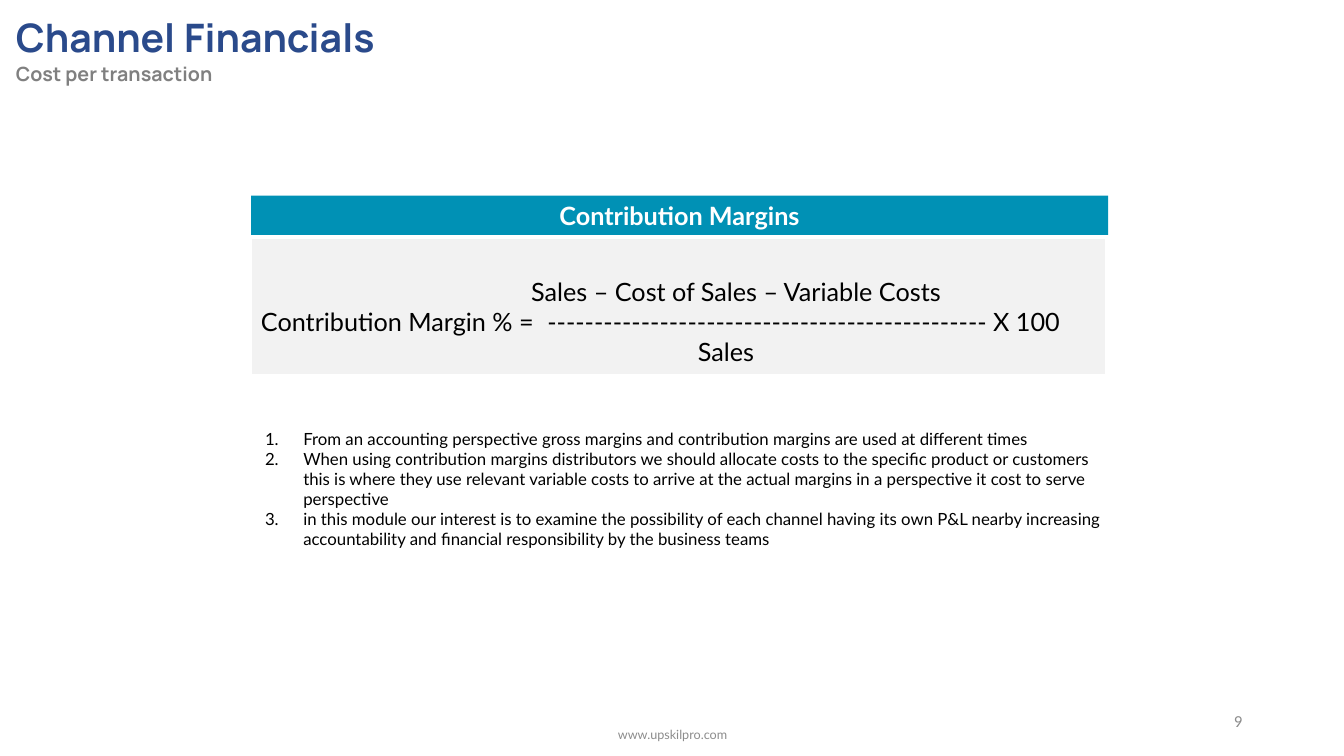
import pptx
import pptx.util
from pptx.dml.color import RGBColor
from pptx.enum.shapes import MSO_SHAPE
from pptx.enum.text import MSO_ANCHOR, PP_ALIGN
from pptx.util import Inches
from lxml import etree

NAVY = RGBColor(0x2A, 0x4A, 0x8B)
GREY = RGBColor(0x80, 0x80, 0x80)
FOOTER_GREY = RGBColor(0x8C, 0x8C, 0x8C)
TEAL = RGBColor(0x00, 0x91, 0xB5)
PALE = RGBColor(0xF2, 0xF2, 0xF2)
WHITE = RGBColor(0xFF, 0xFF, 0xFF)
BLACK = RGBColor(0x00, 0x00, 0x00)

NOTES = [
    "From an accounting perspective gross margins and contribution margins are used at different times",
    "When using contribution margins distributors we should allocate costs to the specific product or "
    "customers this is where they use relevant variable costs to arrive at the actual margins in a "
    "perspective it cost to serve perspective",
    "in this module our interest is to examine the possibility of each channel having its own P&L nearby "
    "increasing accountability and financial responsibility by the business teams",
]


def style(font, name, size, color, bold=False):
    font.name = name
    font.size = pptx.util.Pt(size)
    font.color.rgb = color
    font.bold = bold


def add_text(slide, place, lines, name, size, color, align=PP_ALIGN.LEFT, anchor=MSO_ANCHOR.TOP):
    """Add a wrapping text box with one paragraph per line."""
    box = slide.shapes.add_textbox(*map(Inches, place))
    frame = box.text_frame
    frame.word_wrap = True
    frame.vertical_anchor = anchor
    frame.text = "\n".join(lines)
    for para in frame.paragraphs:
        para.alignment = align
        for span in para.runs:
            style(span.font, name, size, color)
    return box


def add_panel(slide, place, fill, lines, color, bold=False):
    """Add a filled rectangle with centred 18 pt lines."""
    panel = slide.shapes.add_shape(MSO_SHAPE.RECTANGLE, *map(Inches, place))
    panel.shadow.inherit = False
    panel.fill.solid()
    panel.fill.fore_color.rgb = fill
    panel.line.fill.background()
    frame = panel.text_frame
    frame.word_wrap = True
    frame.vertical_anchor = MSO_ANCHOR.MIDDLE
    frame.text = "\n".join(lines)
    for para in frame.paragraphs:
        para.alignment = PP_ALIGN.CENTER
        for span in para.runs:
            style(span.font, "Lato", 18, color, bold)
    return panel


def add_child(parent, tag, **attributes):
    child = etree.SubElement(parent, pptx.oxml.ns.qn(tag))
    for key, value in attributes.items():
        child.set(key, str(value))
    return child


def indent(para, left, first=0):
    properties = para._p.get_or_add_pPr()
    properties.set("marL", str(Inches(left)))
    properties.set("indent", str(Inches(first)))
    return properties


def add_heading(slide):
    box = add_text(slide, (0.06, 0.03, 8.61, 0.88), ["", "Cost per transaction"],
                   "Manrope", 14, GREY)
    title, subtitle = box.text_frame.paragraphs
    for text, size in (("Channel", 28), (" ", 32), ("Financials", 28)):
        span = title.add_run()
        span.text = text
        style(span.font, "Manrope", size, NAVY, bold=True)
    subtitle.runs[0].font.bold = True


def add_formula(slide):
    """Add the margin fraction, with numerator and denominator centred on its rule."""
    lines = ["Sales – Cost of Sales – Variable Costs",
             "Contribution Margin % =\t" + "-" * 47 + " X 100",
             "Sales"]
    panel = add_panel(slide, (2.49, 2.36, 8.48, 1.36), PALE, lines, BLACK)
    panel.line.color.rgb = WHITE
    panel.line.width = pptx.util.Pt(1)
    panel.text_frame.margin_top = Inches(0.35)
    numerator, rule, denominator = panel.text_frame.paragraphs
    indent(numerator, 1.14)
    indent(denominator, 0.94)
    rule.alignment = PP_ALIGN.LEFT
    tabs = add_child(rule._p.get_or_add_pPr(), "a:tabLst")
    add_child(tabs, "a:tab", pos=Inches(2.84), algn="l")


def add_notes_list(slide):
    box = add_text(slide, (2.53, 4.2, 8.59, 1.31), NOTES, "Lato", 12, BLACK)
    for para in box.text_frame.paragraphs:
        properties = indent(para, 0.38, -0.38)
        add_child(properties, "a:buFont", typeface="+mj-lt")
        add_child(properties, "a:buAutoNum", type="arabicPeriod")


def main():
    deck = pptx.Presentation()
    deck.slide_width = Inches(13.33)
    deck.slide_height = Inches(7.5)
    slide = deck.slides.add_slide(deck.slide_layouts[6])

    add_heading(slide)
    add_panel(slide, (2.49, 1.94, 8.5, 0.39), TEAL, ["Contribution Margins"], WHITE, bold=True)
    add_formula(slide)
    add_notes_list(slide)
    add_text(slide, (9.42, 6.95, 3, 0.4), ["9"], "Calibri", 12, FOOTER_GREY,
             PP_ALIGN.RIGHT, MSO_ANCHOR.MIDDLE)
    add_text(slide, (4.42, 7.09, 4.5, 0.4), ["www.upskilpro.com"], "Lato", 9, FOOTER_GREY,
             PP_ALIGN.CENTER, MSO_ANCHOR.MIDDLE)
    deck.save("out.pptx")


if __name__ == "__main__":
    main()
